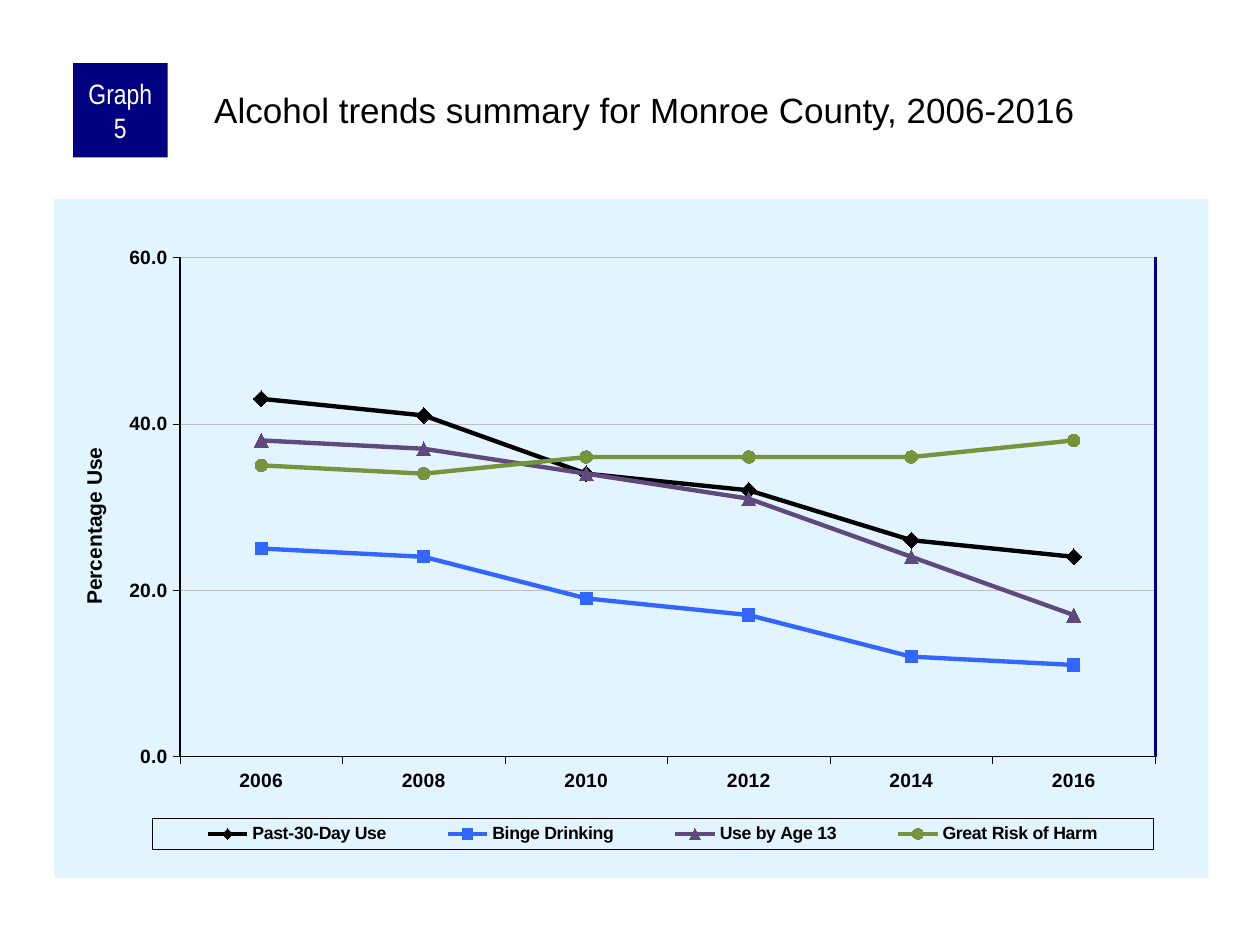
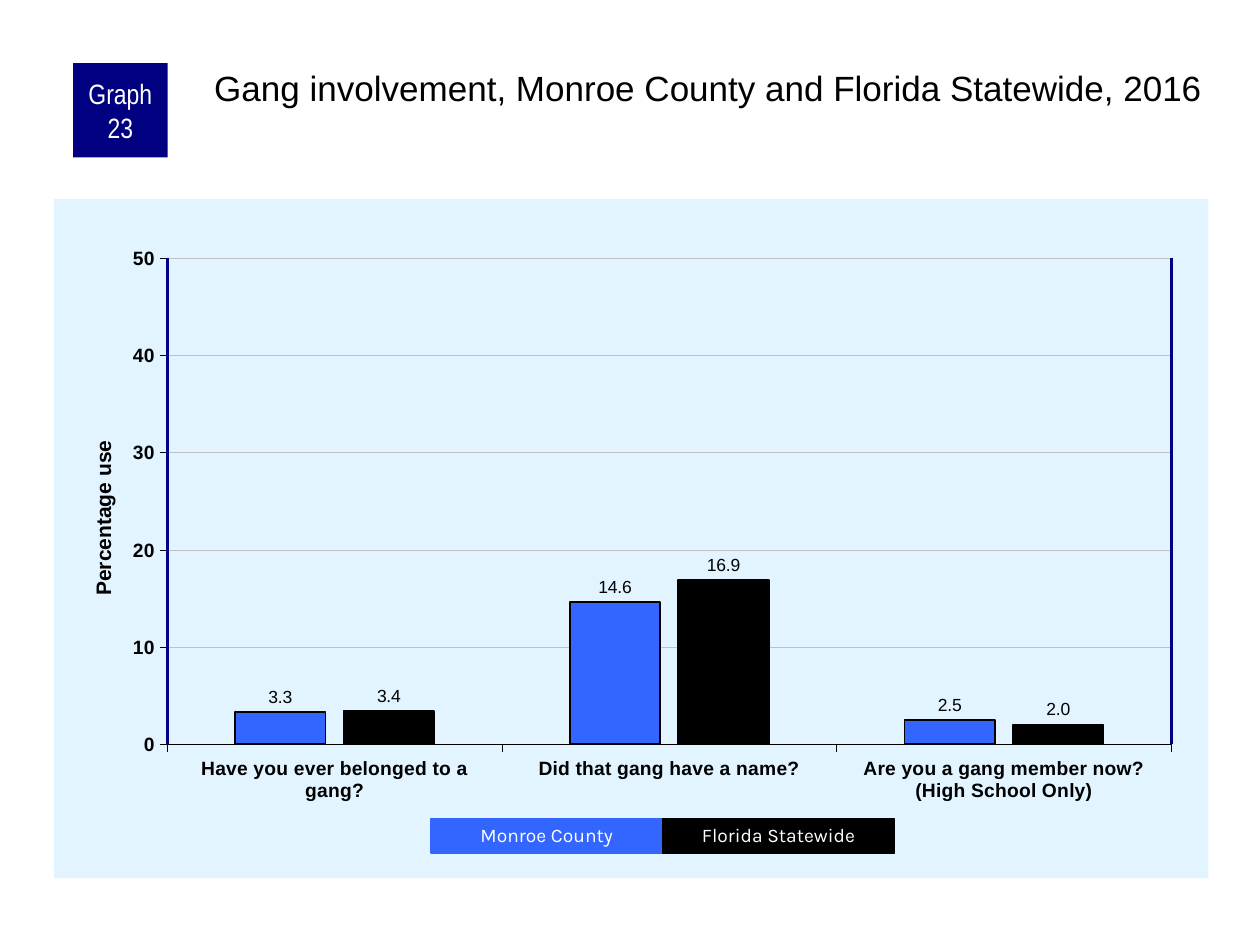
from dataclasses import dataclass
from typing import Any, Optional

import pptx
import pptx.chart.data
import pptx.dml.color
import pptx.enum.chart
import pptx.enum.shapes
import pptx.enum.text
import pptx.oxml
import pptx.oxml.ns
import pptx.util

RGBColor = pptx.dml.color.RGBColor
Pt = pptx.util.Pt
qn = pptx.oxml.ns.qn
XL = pptx.enum.chart
ALIGN = pptx.enum.text.PP_ALIGN
ANCHOR = pptx.enum.text.MSO_ANCHOR
FIT = pptx.enum.text.MSO_AUTO_SIZE

# Shared look
NAVY = RGBColor(0x00, 0x00, 0x80)
BLACK = RGBColor(0x00, 0x00, 0x00)
WHITE = RGBColor(0xFF, 0xFF, 0xFF)
BLUE = RGBColor(0x33, 0x66, 0xFF)
PURPLE = RGBColor(0x60, 0x4A, 0x7B)
GREEN = RGBColor(0x77, 0x93, 0x3C)
GRID_GREY = RGBColor(0xC0, 0xC0, 0xC0)
PANEL = RGBColor(0xE1, 0xF4, 0xFF)
FONT = "Arial"
EMU_PER_PX = 9144  # 100 px to the inch


@dataclass(frozen=True)
class Box:
    x: int
    y: int
    w: int
    h: int


@dataclass(frozen=True)
class Layout:
    """Place inside a chart, as fractions of its size."""
    x: float
    y: float
    w: Optional[float] = None
    h: Optional[float] = None


@dataclass(frozen=True)
class Series:
    name: str
    values: tuple
    color: RGBColor
    marker: Any = None
    marker_size: int = 7


@dataclass(frozen=True)
class Graph:
    number: int
    title: str
    title_y: int
    kind: Any
    categories: tuple
    series: tuple
    axis_title: str
    axis_title_at: Layout
    maximum: int
    step: int
    number_format: str
    plot_at: Layout
    base_size: float


BADGE = Box(58, 50, 75, 75)
CHART = Box(43, 158, 916, 539)
LEGEND_AT = Layout(0.085, 0.912, 0.867, 0.046)
CHIP = Box(342, 650, 184, 27)

MARK = XL.XL_MARKER_STYLE
TRENDS = Graph(
    5, "Alcohol trends summary for Monroe County, 2006-2016", 67,
    XL.XL_CHART_TYPE.LINE_MARKERS,
    tuple(str(year) for year in range(2006, 2017, 2)),
    (
        Series("Past-30-Day Use", (43, 41, 34, 32, 26, 24), BLACK, MARK.DIAMOND, 9),
        Series("Binge Drinking", (25, 24, 19, 17, 12, 11), BLUE, MARK.SQUARE),
        Series("Use by Age 13", (38, 37, 34, 31, 24, 17), PURPLE, MARK.TRIANGLE, 8),
        Series("Great Risk of Harm", (35, 34, 36, 36, 36, 38), GREEN, MARK.CIRCLE),
    ),
    "Percentage Use", Layout(0.02, 0.36), 60, 20, "0.0",
    Layout(0.109, 0.086, 0.845, 0.735), 8,
)
GANGS = Graph(
    23, "Gang involvement, Monroe County and Florida Statewide, 2016", 50,
    XL.XL_CHART_TYPE.COLUMN_CLUSTERED,
    ("Have you ever belonged to a gang?", "Did that gang have a name?",
     "Are you a gang member now?\n(High School Only)"),
    (
        Series("Monroe County", (3.3, 14.6, 2.5), BLUE),
        Series("Florida Statewide", (3.4, 16.9, 2.0), BLACK),
    ),
    "Percentage use", Layout(0.028, 0.35), 50, 10, "0",
    Layout(0.098, 0.087, 0.87, 0.716), 11.5,
)


def px(n: float) -> int:
    return round(n * EMU_PER_PX)


def emu(box: Box) -> tuple:
    return px(box.x), px(box.y), px(box.w), px(box.h)


def set_font(font: Any, size: float, color: RGBColor = BLACK,
             bold: bool = False, name: str = FONT) -> None:
    font.name, font.size, font.bold = name, Pt(size), bold
    font.color.rgb = color


def set_line(line: Any, color: RGBColor, width: float) -> None:
    line.color.rgb = color
    line.width = Pt(width)


# Slide parts
def add_title(slide: Any, text: str, y: int) -> None:
    sp = slide.shapes.title
    sp.left, sp.top, sp.width, sp.height = emu(Box(167, y, 792, 83))
    tf = sp.text_frame
    tf.text = text
    tf.word_wrap, tf.auto_size = True, FIT.NONE
    tf.vertical_anchor = ANCHOR.TOP
    tf.margin_left = tf.margin_top = px(3)
    tf.margin_right = tf.margin_bottom = 0
    p = tf.paragraphs[0]
    p.alignment = ALIGN.LEFT
    set_font(p.runs[0].font, 20)


def add_label(slide: Any, box: Box, text: str, fill: RGBColor,
              size: float, font_name: str) -> Any:
    sp = slide.shapes.add_shape(pptx.enum.shapes.MSO_SHAPE.RECTANGLE, *emu(box))
    sp.shadow.inherit = False
    sp.fill.solid()
    sp.fill.fore_color.rgb = fill
    sp.line.fill.background()
    tf = sp.text_frame
    tf.text = text
    tf.word_wrap = True
    tf.vertical_anchor = ANCHOR.MIDDLE
    p = tf.paragraphs[0]
    p.alignment = ALIGN.CENTER
    set_font(p.runs[0].font, size, WHITE, name=font_name)
    return sp


def add_badge(slide: Any, number: int) -> None:
    tf = add_label(slide, BADGE, f"Graph {number}", NAVY, 16, "Arial Narrow").text_frame
    tf.margin_left = tf.margin_right = px(5)
    tf.margin_top = tf.margin_bottom = 0


def add_chips(slide: Any, graph: Graph) -> None:
    for i, s in enumerate(graph.series):
        box = Box(CHIP.x + i * CHIP.w, CHIP.y, CHIP.w, CHIP.h)
        sp = add_label(slide, box, s.name, s.color, 11, "Karla")
        set_line(sp.line, s.color, 0.75)
        sp.text_frame.auto_size = FIT.SHAPE_TO_FIT_TEXT
        sp.text_frame.paragraphs[0].line_spacing = 0.9


def add_plot_edge(slide: Any, plot: Layout, side: float) -> None:
    """Navy upright at the left (0) or right (1) edge of the plot."""
    x = px(CHART.x + CHART.w * (plot.x + side * plot.w))
    top = px(CHART.y + CHART.h * plot.y)
    bottom = px(CHART.y + CHART.h * (plot.y + plot.h))
    cxn = slide.shapes.add_connector(
        pptx.enum.shapes.MSO_CONNECTOR.STRAIGHT, x, top, x, bottom)
    set_line(cxn.line, NAVY, 1.5)
    cxn.element.spPr.append(pptx.oxml.parse_xml(
        f"<a:effectLst {pptx.oxml.ns.nsdecls('a')}/>"))


# Chart XML
def place(parent: Any, index: int, at: Layout) -> None:
    for old in parent.findall(qn("c:layout")):
        parent.remove(old)
    target = '<c:layoutTarget val="inner"/>' if parent.tag == qn("c:plotArea") else ""
    modes = '<c:xMode val="edge"/><c:yMode val="edge"/>'
    sizes = "".join(f'<c:{key} val="{value}"/>'
                    for key, value in zip("xywh", (at.x, at.y, at.w, at.h))
                    if value is not None)
    parent.insert(index, pptx.oxml.parse_xml(
        f"<c:layout {pptx.oxml.ns.nsdecls('c')}><c:manualLayout>"
        f"{target}{modes}{sizes}</c:manualLayout></c:layout>"))


def area_style(fill: Optional[RGBColor], line: Optional[RGBColor],
               width: float = 0) -> Any:
    def paint(color: Optional[RGBColor]) -> str:
        if color is None:
            return "<a:noFill/>"
        return f'<a:solidFill><a:srgbClr val="{color}"/></a:solidFill>'
    return pptx.oxml.parse_xml(
        f"<c:spPr {pptx.oxml.ns.nsdecls('c', 'a')}>{paint(fill)}"
        f'<a:ln w="{Pt(width)}">{paint(line)}</a:ln></c:spPr>')


# Charts
def format_axes(chart: Any, graph: Graph) -> None:
    for axis in (chart.category_axis, chart.value_axis):
        axis.major_tick_mark = XL.XL_TICK_MARK.OUTSIDE
        axis.minor_tick_mark = XL.XL_TICK_MARK.NONE
        set_font(axis.tick_labels.font, 11, bold=True)
        set_line(axis.format.line, BLACK, 0.25)
    axis = chart.value_axis
    axis.minimum_scale, axis.maximum_scale = 0, graph.maximum
    axis.major_unit = graph.step
    axis.tick_labels.number_format = graph.number_format
    axis.tick_labels.number_format_is_linked = False
    set_line(axis.major_gridlines.format.line, GRID_GREY, 0.25)
    tf = axis.axis_title.text_frame
    tf.text = graph.axis_title
    set_font(tf.paragraphs[0].runs[0].font, 12, bold=True)
    place(axis.axis_title.element, 1, graph.axis_title_at)


def format_lines(chart: Any, graph: Graph) -> None:
    for ser, s in zip(chart.plots[0].series, graph.series):
        ser.smooth = False
        set_line(ser.format.line, s.color, 2.5)
        ser.marker.style, ser.marker.size = s.marker, s.marker_size
        ser.marker.format.fill.solid()
        ser.marker.format.fill.fore_color.rgb = s.color
        set_line(ser.marker.format.line, s.color, 0.75)
    chart.has_legend = True
    chart.legend.position = XL.XL_LEGEND_POSITION.BOTTOM
    chart.legend.include_in_layout = False
    set_font(chart.legend.font, 10.1, bold=True)
    legend = chart.element.find(".//" + qn("c:legend"))
    place(legend, 1, LEGEND_AT)
    legend.find(qn("c:overlay")).addnext(area_style(None, BLACK, 0.25))


def format_columns(chart: Any, graph: Graph) -> None:
    plot = chart.plots[0]
    plot.gap_width, plot.overlap = 150, -20
    for ser, s in zip(plot.series, graph.series):
        ser.format.fill.solid()
        ser.format.fill.fore_color.rgb = s.color
        set_line(ser.format.line, BLACK, 1)
        labels = ser.data_labels
        labels.show_value = True
        labels.number_format, labels.number_format_is_linked = "0.0", False
        labels.position = XL.XL_LABEL_POSITION.OUTSIDE_END
        set_font(labels.font, 10)


def add_graph_chart(slide: Any, graph: Graph) -> None:
    data = pptx.chart.data.CategoryChartData()
    data.categories = graph.categories
    for s in graph.series:
        data.add_series(s.name, s.values)
    chart = slide.shapes.add_chart(graph.kind, *emu(CHART), data).chart
    chart.has_title = chart.has_legend = False
    set_font(chart.font, graph.base_size)
    chart.plots[0].vary_by_categories = False
    chart.element.find(qn("c:chart")).addnext(area_style(PANEL, None))
    format_axes(chart, graph)
    is_line = graph.kind == XL.XL_CHART_TYPE.LINE_MARKERS
    (format_lines if is_line else format_columns)(chart, graph)
    plot_area = chart.element.find(".//" + qn("c:plotArea"))
    place(plot_area, 0, graph.plot_at)
    plot_area.append(area_style(None, BLACK if is_line else None, 1))
    for side in (1,) if is_line else (0, 1):
        add_plot_edge(slide, graph.plot_at, side)
    if not is_line:
        add_chips(slide, graph)


def main() -> None:
    prs = pptx.Presentation()
    prs.slide_width, prs.slide_height = px(1000), px(750)
    for graph in (TRENDS, GANGS):
        slide = prs.slides.add_slide(prs.slide_layouts[5])
        add_title(slide, graph.title, graph.title_y)
        add_badge(slide, graph.number)
        add_graph_chart(slide, graph)
    prs.save("out.pptx")


if __name__ == "__main__":
    main()
